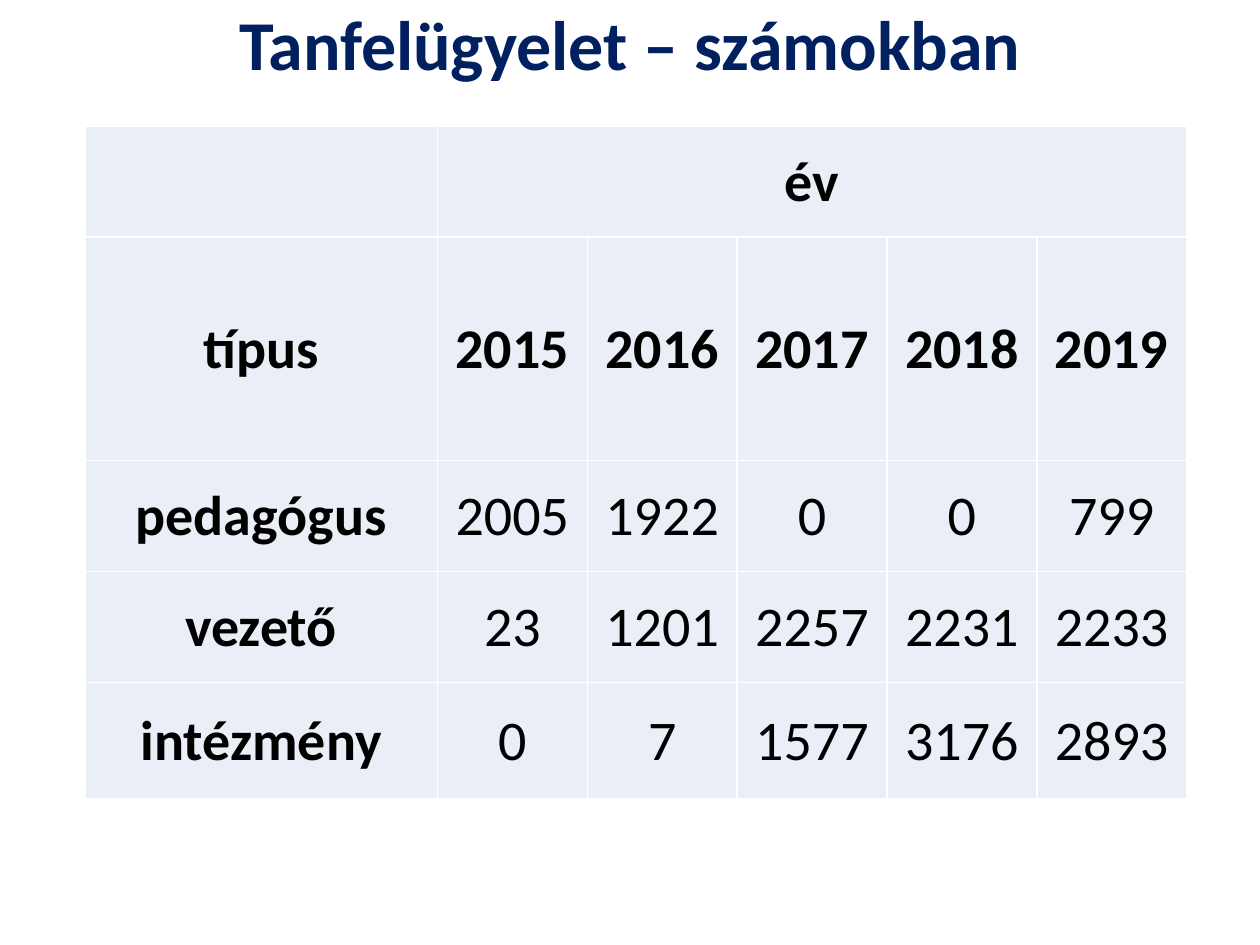
from lxml import etree
from pptx import Presentation
from pptx import util as u
from pptx.dml import color
from pptx.enum import text
from pptx.oxml import ns

COLORS = {"title": "002060", "cell": "EAEFF7", "border": "FFFFFF", "text": "000000"}
BORDERS = ("a:lnL", "a:lnR", "a:lnT", "a:lnB")
ROWS = [
    ["", "év", "", "", "", ""],
    ["típus", "2015", "2016", "2017", "2018", "2019"],
    ["pedagógus", "2005", "1922", "0", "0", "799"],
    ["vezető", "23", "1201", "2257", "2231", "2233"],
    ["intézmény", "0", "7", "1577", "3176", "2893"],
]
COLUMN_WIDTHS = [7.11] + [3.02] * 5
ROW_HEIGHTS = [2.24, 4.5, 2.24, 2.24, 2.34]
CELL_FORMAT = {
    "vertical_anchor": text.MSO_ANCHOR.MIDDLE,
    "margin_left": u.Cm(0.03),
    "margin_right": u.Cm(0.03),
    "margin_top": u.Cm(0.03),
    "margin_bottom": u.Cm(0),
}


def format_paragraph(para, size, bold, shade):
    para.alignment = text.PP_ALIGN.CENTER
    values = {"name": "Calibri", "size": u.Pt(size), "bold": bold}
    for name, value in values.items():
        setattr(para.font, name, value)
    para.font.color.rgb = color.RGBColor.from_string(COLORS[shade])


def add_borders(cell):
    properties = cell._tc.get_or_add_tcPr()
    for tag in BORDERS:
        line = etree.SubElement(properties, ns.qn(tag), w=str(u.Pt(1)))
        fill = etree.SubElement(line, ns.qn("a:solidFill"))
        etree.SubElement(fill, ns.qn("a:srgbClr"), val=COLORS["border"])


deck = Presentation()
deck.slide_width = u.Cm(25.4)
deck.slide_height = u.Cm(19.05)
page = deck.slides.add_slide(deck.slide_layouts[5])

title = page.shapes.title
title_place = {"left": 1.27, "top": 0, "width": 22.86, "height": 1.93}
for name, value in title_place.items():
    setattr(title, name, u.Cm(value))
title.text_frame.text = "Tanfelügyelet – számokban"
title.text_frame.vertical_anchor = text.MSO_ANCHOR.MIDDLE
title.text_frame.auto_size = text.MSO_AUTO_SIZE.NONE
title.text_frame.paragraphs[0].line_spacing = 0.9
format_paragraph(title.text_frame.paragraphs[0], 40, True, "title")

frame = page.shapes.add_table(
    len(ROWS), len(COLUMN_WIDTHS), u.Cm(1.71), u.Cm(2.54),
    u.Cm(sum(COLUMN_WIDTHS)), u.Cm(sum(ROW_HEIGHTS)),
)
table = frame.table
table.first_row = False
table.horz_banding = False
for column, width in zip(table.columns, COLUMN_WIDTHS):
    column.width = u.Cm(width)
for row, height in zip(table.rows, ROW_HEIGHTS):
    row.height = u.Cm(height)
table.cell(0, 1).merge(table.cell(0, 5))

for row_index, values in enumerate(ROWS):
    for column_index, value in enumerate(values):
        cell = table.cell(row_index, column_index)
        cell.text = value
        for name, setting in CELL_FORMAT.items():
            setattr(cell, name, setting)
        add_borders(cell)
        cell.fill.solid()
        cell.fill.fore_color.rgb = color.RGBColor.from_string(COLORS["cell"])
        bold = row_index < 2 or column_index == 0
        format_paragraph(cell.text_frame.paragraphs[0], 32, bold, "text")

deck.save("out.pptx")
